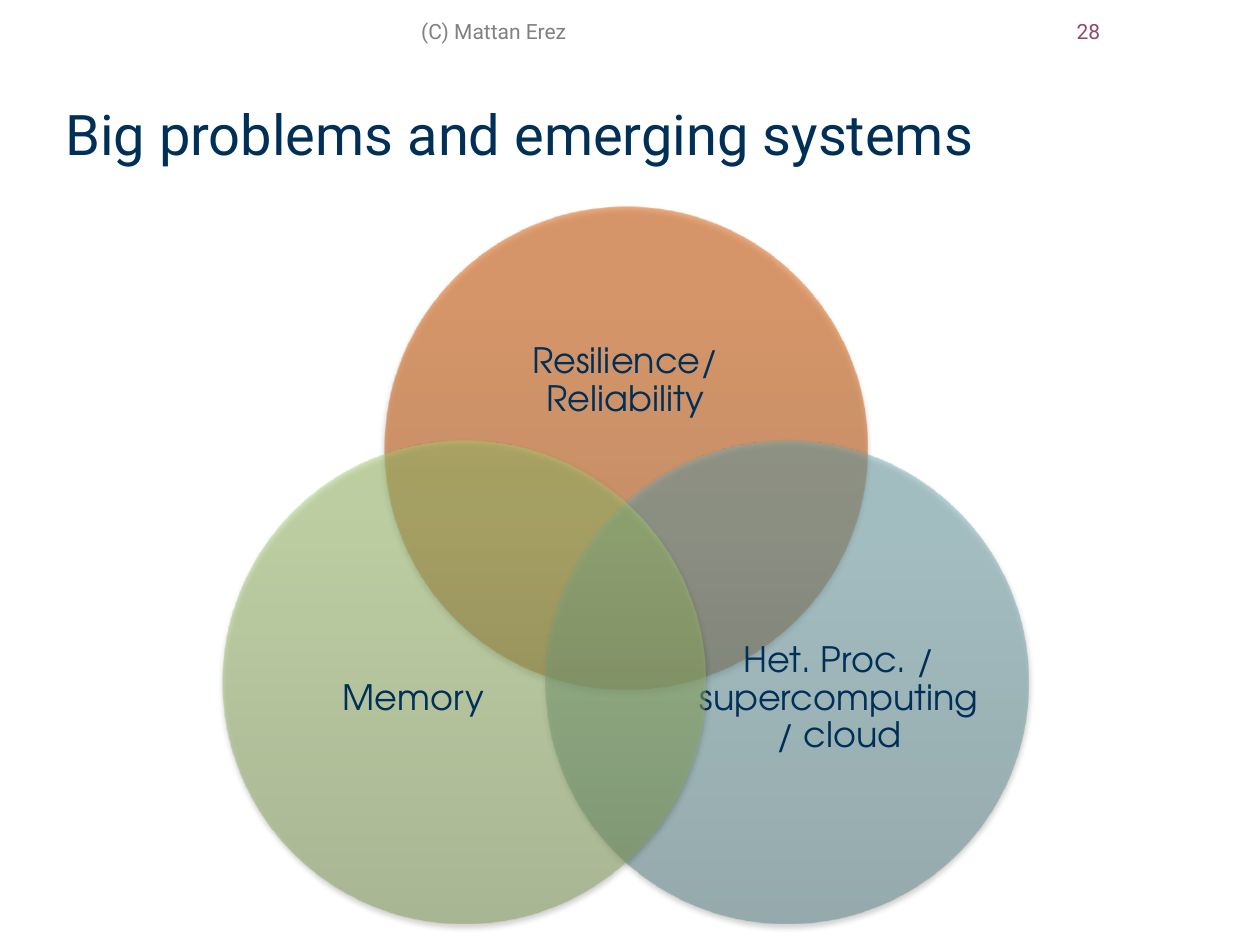
from lxml import etree
from pptx import Presentation
from pptx.dml.color import RGBColor as Rgb
from pptx.enum.shapes import MSO_SHAPE as Form
from pptx.enum.text import MSO_ANCHOR as Anchor, PP_ALIGN as Align
from pptx.oxml import parse_xml
from pptx.oxml.ns import qn
from pptx.util import Pt

NS = 'xmlns:a="http://schemas.openxmlformats.org/drawingml/2006/main"'
COLORS = {"navy": "003057", "gray": "808080", "plum": "94476B", "black": "000000"}
# Gradient stops of each circle, from bottom to top
BLENDS = {
    "orange": ("A74500", "D95900", "DA5A00"),
    "teal": ("5A8287", "74A9AF", "74ABB1"),
    "green": ("809A57", "A6C871", "A7CB70"),
}
STOPS = (0, 80, 100)


def put_text(frame, text, size=12, font="Roboto", color="navy",
             align=Align.LEFT, space=1.0):
    para = frame.paragraphs[0]
    para.text = text
    para.alignment, para.line_spacing = align, space
    para.font.size, para.font.name = Pt(size), font
    para.font.color.rgb = Rgb.from_string(COLORS[color])


def tint(hue, alpha):
    return f'<a:srgbClr val="{hue}"><a:alpha val="{alpha * 1000}"/></a:srgbClr>'


class Deck:
    def __init__(self, slide):
        self.slide = slide
        self.group = slide.shapes.add_group_shape().shapes

    def label(self, box, text, anchor=Anchor.MIDDLE, pad=(7.2, 3.6, 7.2, 3.6),
              home=None, **style):
        home = home or self.slide.shapes
        frame = home.add_textbox(*map(Pt, box)).text_frame
        frame.word_wrap, frame.vertical_anchor = True, anchor
        (frame.margin_left, frame.margin_top,
         frame.margin_right, frame.margin_bottom) = map(Pt, pad)
        put_text(frame, text, **style)

    def circle(self, left, top, size, blend):
        disc = self.group.add_shape(Form.OVAL, Pt(left), Pt(top), Pt(size), Pt(size))
        disc.line.fill.background()
        disc.fill.background()
        disc.shadow.inherit = False
        props = disc.fill._xPr
        # Half-transparent gradient running upwards
        stops = "".join(f'<a:gs pos="{pos * 1000}">{tint(hue, 50)}</a:gs>'
                        for pos, hue in zip(STOPS, BLENDS[blend]))
        props.replace(props.find(qn("a:noFill")), parse_xml(
            f'<a:gradFill {NS} rotWithShape="1"><a:gsLst>{stops}</a:gsLst>'
            '<a:lin ang="16200000" scaled="0"/></a:gradFill>'))
        # Soft shadow below
        glow = etree.SubElement(props.find(qn("a:effectLst")), qn("a:outerShdw"),
                                blurRad=str(Pt(3.1)), dist=str(Pt(1.8)),
                                dir="5400000", rotWithShape="0")
        glow.append(parse_xml(tint(COLORS["black"], 35).replace(
            "<a:srgbClr", f"<a:srgbClr {NS}", 1)))

    def topic(self, spot, blend, box, text, foot=0):
        self.circle(*spot, SIZE, blend)
        self.label(box, text, pad=(0, 0, 0, foot), home=self.group, size=20,
                   font="TeX Gyre Adventor", align=Align.CENTER, space=0.9)


SIZE = 276               # circle diameter
MID, STEP = 219.6, 92.2  # left of the top circle, shift of the lower ones
HIGH, LOW = 118, 252     # circle tops


def main():
    prs = Presentation()
    prs.slide_width, prs.slide_height = Pt(720), Pt(540)
    deck = Deck(prs.slides.add_slide(prs.slide_layouts[6]))

    # Title
    deck.label((30.2, 54.7, 677.5, 70.6), "Big problems and emerging systems",
               anchor=Anchor.TOP, size=32, space=0.99)

    # Venn diagram
    deck.topic((MID, HIGH), "orange", (256.3, 166.3, 202.3, 124.6),
               "Resilience/\vReliability", foot=21.5)
    deck.topic((MID + STEP, LOW), "teal", (396.7, 323.3, 165.6, 151.9),
               "Het. Proc. / supercomputing / cloud")
    deck.topic((MID - STEP, LOW), "green", (153.4, 323.3, 165.6, 151.9), "Memory")

    # Header line
    deck.label((66.2, 0, 432, 36), "(C) Mattan Erez", color="gray",
               align=Align.CENTER)
    deck.label((570.2, 0, 65.5, 36), "28", color="plum", align=Align.RIGHT)

    prs.save("out.pptx")


if __name__ == "__main__":
    main()
